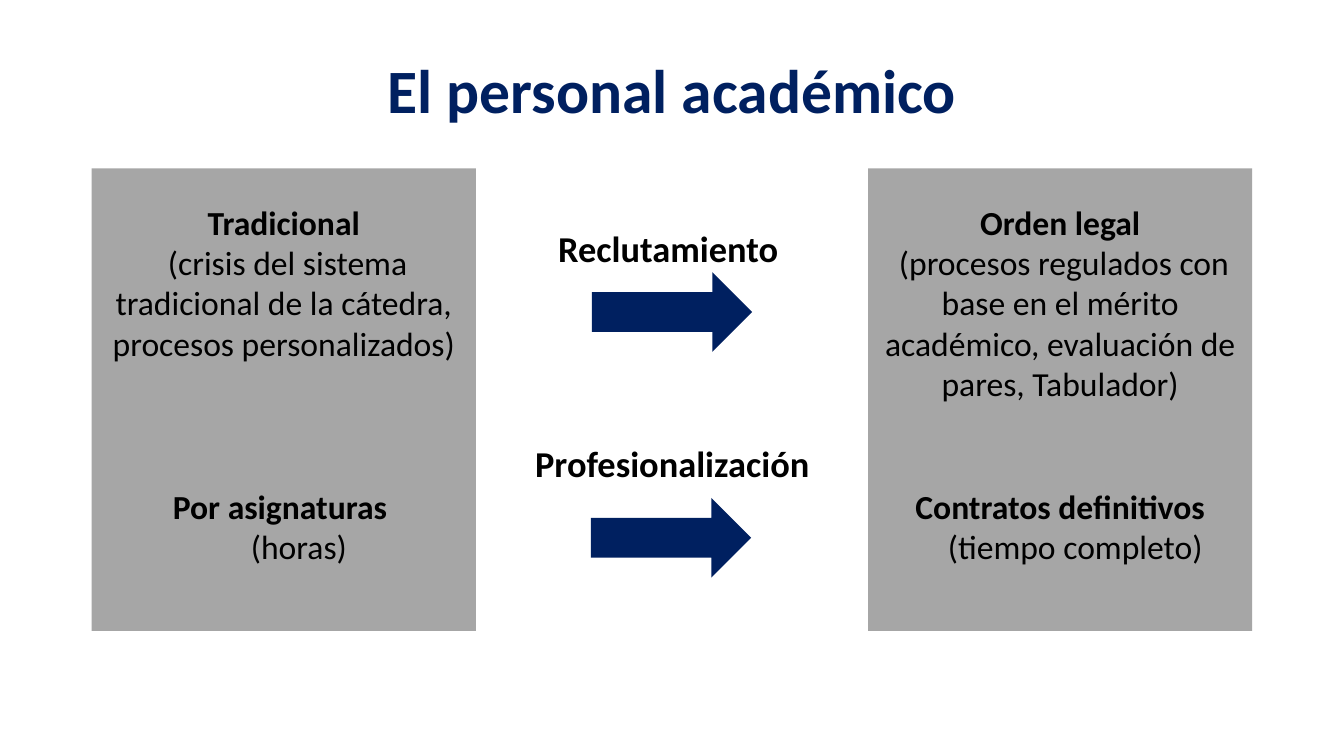
from pptx import Presentation
from pptx.dml.color import RGBColor
from pptx.enum import shapes, text
from pptx.util import Inches, Pt

NAVY, GRAY, BLACK = "002060", "A6A6A6", "000000"


def paint(color_format, hex_color):
    """Set a fill or font to one solid colour."""
    color_format.solid()
    color_format.fore_color.rgb = RGBColor.from_string(hex_color)


def write(paragraph, words, size, bold, color=BLACK):
    """Fill a centred paragraph with words in one format."""
    paragraph.text = words
    paragraph.alignment = text.PP_ALIGN.CENTER
    font = paragraph.runs[0].font
    font.name, font.size, font.bold = "Calibri", Pt(size), bold
    paint(font.fill, color)


prs = Presentation()
prs.slide_width, prs.slide_height = Inches(13.33), Inches(7.5)
slide = prs.slides.add_slide(prs.slide_layouts[6])

title = slide.shapes.add_textbox(Inches(0.92), Inches(0.2), Inches(11.5), Inches(1.45)).text_frame
title.word_wrap = True
title.vertical_anchor = text.MSO_ANCHOR.MIDDLE
write(title.paragraphs[0], "El personal académico", 44, True, NAVY)
title.paragraphs[0].line_spacing = 0.9

# Processes that lead from the old situation to the new one
processes = [
    ("Reclutamiento ", 2.19, 5.87, 2.7),
    ("Profesionalización", 4.33, 5.86, 4.94),
]
for process, label_top, arrow_left, arrow_top in processes:
    label = slide.shapes.add_textbox(Inches(4.92), Inches(label_top), Inches(3.5), Inches(0.54)).text_frame
    label.word_wrap = True
    write(label.paragraphs[0], process, 26, True)

    arrow = slide.shapes.add_shape(
        shapes.MSO_SHAPE.RIGHT_ARROW,
        Inches(arrow_left), Inches(arrow_top), Inches(1.59), Inches(0.79))
    arrow.shadow.inherit = False
    paint(arrow.fill, NAVY)
    arrow.line.fill.background()

# Panels: left edge, gap in points before the second heading, and lines
situations = [
    (0.91, 88, [
        "Tradicional",
        " (crisis del sistema tradicional de la cátedra, procesos personalizados)",
        "Por asignaturas ",
        "(horas)",
    ]),
    (8.61, 59, [
        "Orden legal",
        " (procesos regulados con base en el mérito académico, evaluación de pares, Tabulador)",
        "Contratos definitivos",
        "(tiempo completo)",
    ]),
]
for left, gap, lines in situations:
    panel = slide.shapes.add_shape(
        shapes.MSO_SHAPE.RECTANGLE, Inches(left), Inches(1.67), Inches(3.81), Inches(4.59))
    panel.shadow.inherit = False
    paint(panel.fill, GRAY)
    panel.line.fill.background()

    frame = panel.text_frame
    frame.word_wrap = True
    frame.vertical_anchor = text.MSO_ANCHOR.MIDDLE
    frame.margin_bottom = Inches(0.36)
    for index, line in enumerate(lines):
        paragraph = frame.add_paragraph() if index else frame.paragraphs[0]
        write(paragraph, line, 24, index % 2 == 0)
    frame.paragraphs[2].space_before = Pt(gap)
    indented = frame.paragraphs[3]._p.get_or_add_pPr()
    indented.set("marL", str(Inches(0.3)))

prs.save("out.pptx")
